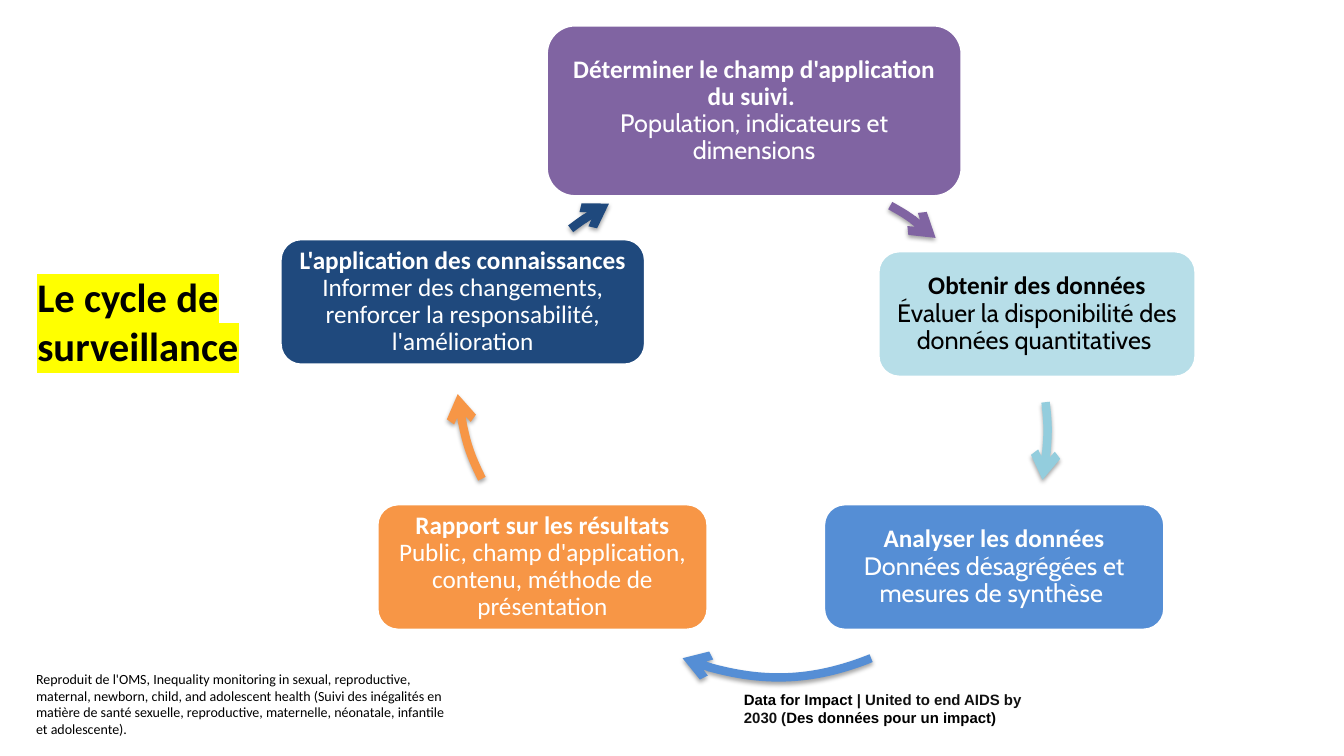
from lxml import etree
from pptx import Presentation
from pptx.dml.color import RGBColor
from pptx.enum.shapes import MSO_SHAPE
from pptx.enum.text import MSO_ANCHOR, MSO_AUTO_SIZE, PP_ALIGN
from pptx.oxml.ns import qn
from pptx.util import Inches, Pt

ROUNDED = MSO_SHAPE.ROUNDED_RECTANGLE
MIDDLE = MSO_ANCHOR.MIDDLE
CENTER, LEFT = PP_ALIGN.CENTER, PP_ALIGN.LEFT
GROW, FIXED = MSO_AUTO_SIZE.SHAPE_TO_FIT_TEXT, MSO_AUTO_SIZE.NONE

WHITE = RGBColor(0xFF, 0xFF, 0xFF)
BLACK = RGBColor(0, 0, 0)
NEAR_BLACK = RGBColor(0x11, 0x11, 0x11)
YELLOW = RGBColor(0xFF, 0xFF, 0x00)
PURPLE = RGBColor(0x80, 0x64, 0xA2)
PALE_TEAL = RGBColor(0xB7, 0xDE, 0xE8)
TEAL = RGBColor(0x93, 0xCD, 0xDD)
BLUE = RGBColor(0x55, 0x8E, 0xD5)
ORANGE = RGBColor(0xF7, 0x96, 0x46)
NAVY = RGBColor(0x1F, 0x49, 0x7D)

# Each step: box, fill, text colour, heading, detail, detail font
STEPS = [
    ((5.42, 0.25, 4.12, 1.7), PURPLE, WHITE,
     "Déterminer le champ d'application du suivi. ",
     "Population, indicateurs et dimensions", "Cabin"),
    ((8.71, 2.49, 3.15, 1.25), PALE_TEAL, BLACK, "Obtenir des données",
     "Évaluer la disponibilité des données quantitatives ", "Cabin"),
    ((8.17, 5, 3.38, 1.25), BLUE, WHITE, "Analyser les données",
     "Données désagrégées et mesures de synthèse ", "Cabin"),
    ((3.74, 5, 3.28, 1.25), ORANGE, WHITE, "Rapport sur les résultats",
     "Public, champ d'application, contenu, méthode de présentation", "Calibri"),
    ((2.78, 2.37, 3.62, 1.25), NAVY, WHITE, "L'application des connaissances",
     "Informer des changements, renforcer la responsabilité, l'amélioration",
     "Calibri"),
]

# Each arrow: colour, corner of its cycle square, control points of its arc
CYCLE_SIZE = 5.01
ARROWS = [
    (PURPLE, (5.1, 1.72), ((8.83, 2.04), (8.99, 2.13), (9.14, 2.23), (9.28, 2.36))),
    (TEAL, (5.38, 1.78), ((10.37, 3.99), (10.4, 4.24), (10.39, 4.5), (10.34, 4.76))),
    (BLUE, (5.2, 1.7), ((8.64, 6.53), (8.04, 6.77), (7.37, 6.77), (6.77, 6.53))),
    (ORANGE, (4.53, 1.15), ((4.78, 4.75), (4.65, 4.49), (4.57, 4.2), (4.54, 3.91))),
    (NAVY, (4.72, 1.73), ((5.66, 2.27), (5.78, 2.18), (5.91, 2.09), (6.04, 2.02))),
]

SOURCE_NOTE = [(
    "Reproduit de l'OMS, Inequality monitoring in sexual, reproductive, maternal, "
    "newborn, child, and adolescent health (Suivi des inégalités en matière de santé "
    "sexuelle, reproductive, maternelle, néonatale, infantile et adolescente).",
    BLACK)]
FOOTER = [("Data for Impact ", BLACK),
          ("| United to end AIDS by 2030 (", NEAR_BLACK),
          ("Des données pour un impact)", BLACK)]


def style_font(font, name, size, color, bold=False):
    font.name, font.size, font.bold = name, Pt(size), bold
    font.color.rgb = color


def place_title(slide, left, top, width, height):
    title = slide.shapes.title
    title.left, title.top = Inches(left), Inches(top)
    title.width, title.height = Inches(width), Inches(height)
    frame = title.text_frame
    frame.text = "Le cycle de surveillance"
    frame.vertical_anchor = MIDDLE
    frame.auto_size = FIXED
    heading = frame.paragraphs[0]
    heading.alignment = LEFT
    run = heading.runs[0]
    style_font(run.font, "Calibri", 29, BLACK, True)
    # Highlight follows the fill in the run properties
    highlight = etree.Element(qn("a:highlight"))
    etree.SubElement(highlight, qn("a:srgbClr"), val=str(YELLOW))
    run.font._element.find(qn("a:solidFill")).addnext(highlight)


def add_step(slide, box, fill, ink, heading, detail, detail_font):
    card = slide.shapes.add_shape(ROUNDED, *map(Inches, box))
    card.shadow.inherit = False
    card.fill.solid()
    card.fill.fore_color.rgb = fill
    card.line.color.rgb = WHITE
    card.line.width = Pt(2)
    frame = card.text_frame
    frame.word_wrap = True
    frame.vertical_anchor = MIDDLE
    frame.margin_left = frame.margin_right = Inches(0.07)
    frame.margin_top = frame.margin_bottom = Inches(0.07)
    text = frame.paragraphs[0]
    text.text = f"{heading}\v{detail}"
    text.alignment = CENTER
    text.line_spacing = 0.9
    heading_run, detail_run = text.runs
    style_font(heading_run.font, "Calibri", 18, ink, True)
    style_font(detail_run.font, detail_font, 18, ink)


def add_arrow(slide, color, corner, controls):
    left, top = corner
    builder = slide.shapes.build_freeform(Inches(left), Inches(top))
    far_corner = Inches(left + CYCLE_SIZE), Inches(top + CYCLE_SIZE)
    builder.add_line_segments([far_corner], close=False)
    arrow = builder.convert_to_shape()
    properties = arrow._element.spPr
    # One Bézier arc inside the cycle square
    outline = next(properties.iter(qn("a:path")))
    for segment in list(outline):
        outline.remove(segment)
    start = etree.SubElement(outline, qn("a:moveTo"))
    arc = etree.SubElement(outline, qn("a:cubicBezTo"))
    for parent, (x, y) in zip((start, arc, arc, arc), controls):
        etree.SubElement(parent, qn("a:pt"),
                         x=str(Inches(x - left)), y=str(Inches(y - top)))
    arrow.fill.background()
    arrow.line.color.rgb = color
    arrow.line.width = Pt(6)
    etree.SubElement(properties.find(qn("a:ln")), qn("a:tailEnd"), type="arrow")
    # Soft shadow straight below
    arrow.shadow.inherit = False
    shadow = etree.SubElement(
        properties.find(qn("a:effectLst")), qn("a:outerShdw"),
        blurRad=str(Pt(3.1)), dist=str(Pt(1.8)), dir="5400000", rotWithShape="0")
    shade = etree.SubElement(shadow, qn("a:srgbClr"), val=str(BLACK))
    etree.SubElement(shade, qn("a:alpha"), val="35000")


def add_note(slide, box, parts, font_name, size, bold=False):
    note = slide.shapes.add_textbox(*map(Inches, box))
    frame = note.text_frame
    frame.word_wrap = True
    frame.auto_size = GROW
    for text, color in parts:
        run = frame.paragraphs[0].add_run()
        run.text = text
        style_font(run.font, font_name, size, color, bold)


def build_cycle_slide(deck):
    slide = deck.slides.add_slide(deck.slide_layouts.get_by_name("Title Only"))
    add_note(slide, (7.28, 6.8, 3.06, 0.28), FOOTER, "Arial", 10.7, True)
    place_title(slide, 0.27, 0.14, 2.38, 6.09)
    add_note(slide, (0.26, 6.6, 4.33, 0.44), SOURCE_NOTE, "Calibri", 10)
    for step, arrow in zip(STEPS, ARROWS):
        add_step(slide, *step)
        add_arrow(slide, *arrow)


def main():
    deck = Presentation()
    deck.slide_width, deck.slide_height = Inches(13.33), Inches(7.5)
    build_cycle_slide(deck)
    deck.save("out.pptx")


if __name__ == "__main__":
    main()
